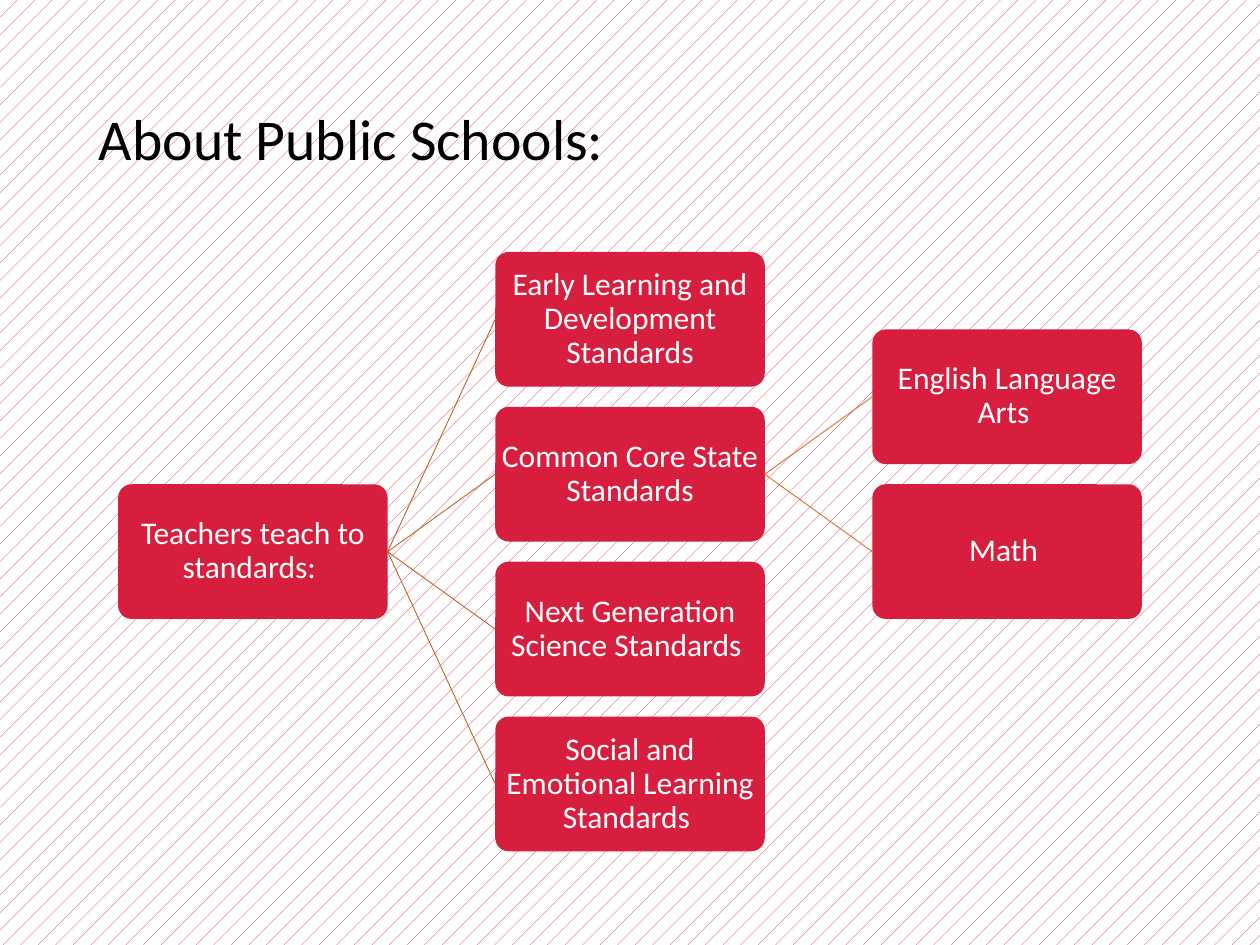
from lxml.etree import SubElement
from pptx import Presentation
from pptx.dml.color import RGBColor
from pptx.enum.dml import MSO_PATTERN
from pptx.enum.shapes import MSO_CONNECTOR, MSO_SHAPE
from pptx.enum.text import MSO_ANCHOR, PP_ALIGN
from pptx.oxml.ns import qn
from pptx.util import Pt

TITLE = "About Public Schools:"
RED, WHITE, BLACK = "D71E3E", "FFFFFF", "000000"

# name: (column, row, text); half rows sit between two full ones
BOXES = {
    "root": (0, 1.5, "Teachers teach to standards: "),
    "early": (1, 0, "Early Learning and Development Standards"),
    "core": (1, 1, "Common Core State Standards"),
    "science": (1, 2, "Next Generation Science Standards "),
    "social": (1, 3, "Social and Emotional Learning Standards "),
    "arts": (2, 0.5, "English Language Arts "),
    "math": (2, 1.5, "Math "),
}
# parent: (line colour, children)
LINKS = {
    "root": ("BE6427", ("early", "core", "science", "social")),
    "core": ("D7712C", ("arts", "math")),
}

LEFT, TOP = 67.5, 144
WIDE, HIGH = 154, 77
COL, ROW = 215.5, 88.5
LEFT_SITE, RIGHT_SITE = 1, 3


def color(code):
    return RGBColor.from_string(code)


def write(shape, text, size=18, ink=WHITE, align=PP_ALIGN.CENTER, pad=(0.9, 0.9)):
    frame = shape.text_frame
    frame.word_wrap = True
    frame.vertical_anchor = MSO_ANCHOR.MIDDLE
    frame.margin_left = frame.margin_right = Pt(pad[0])
    frame.margin_top = frame.margin_bottom = Pt(pad[1])
    para = frame.paragraphs[0]
    para.alignment = align
    para.line_spacing = 0.9
    run = para.add_run()
    run.text = text
    run.font.name = "Calibri"
    run.font.size = Pt(size)
    run.font.color.rgb = color(ink)


def add_box(slide, col, row, text):
    box = slide.shapes.add_shape(
        MSO_SHAPE.ROUNDED_RECTANGLE,
        Pt(LEFT + col * COL), Pt(TOP + row * ROW), Pt(WIDE), Pt(HIGH))
    box.adjustments[0] = 0.1
    box.shadow.inherit = False
    box.fill.solid()
    box.fill.fore_color.rgb = color(RED)
    box.line.fill.background()
    write(box, text)
    return box


def link(slide, start, end, ink):
    line = slide.shapes.add_connector(MSO_CONNECTOR.STRAIGHT, 0, 0, 0, 0)
    line.begin_connect(start, RIGHT_SITE)
    line.end_connect(end, LEFT_SITE)
    line.line.color.rgb = color(ink)
    line.line.width = Pt(0.5)
    SubElement(line._element.spPr, qn("a:effectLst"))


def main():
    deck = Presentation()
    deck.slide_width, deck.slide_height = Pt(720), Pt(540)
    slide = deck.slides.add_slide(deck.slide_layouts[6])

    back = slide.background.fill
    back.patterned()
    back.pattern = MSO_PATTERN.PERCENT_5
    back.fore_color.rgb = color(RED)
    back.back_color.rgb = color(WHITE)

    title = slide.shapes.add_textbox(Pt(49.5), Pt(28.75), Pt(621), Pt(104.4))
    write(title, TITLE, size=33, ink=BLACK, align=PP_ALIGN.LEFT, pad=(7.2, 3.6))

    boxes = {name: add_box(slide, *spot) for name, spot in BOXES.items()}
    for parent, (ink, children) in LINKS.items():
        for child in children:
            link(slide, boxes[parent], boxes[child], ink)

    deck.save("out.pptx")


if __name__ == "__main__":
    main()
